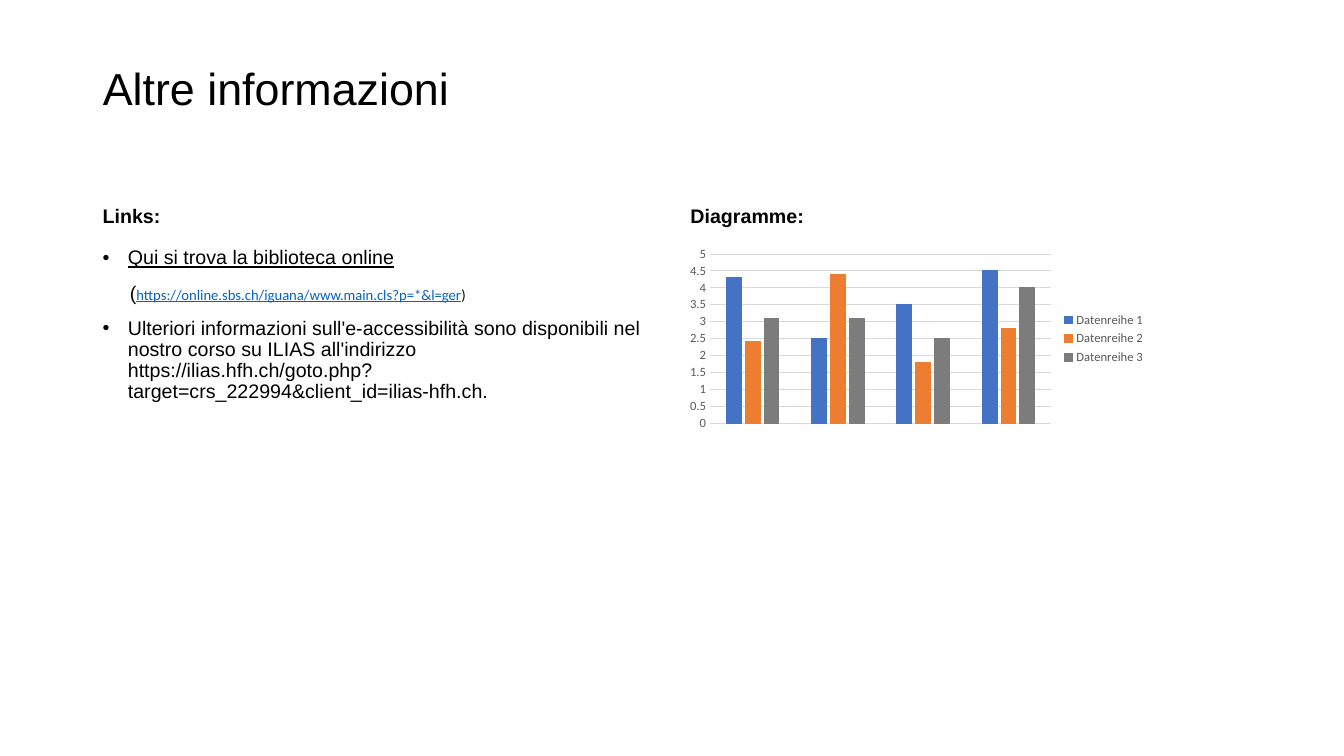
from lxml import etree
from pptx import Presentation
from pptx.chart.data import CategoryChartData
from pptx.dml.color import RGBColor
from pptx.enum.chart import XL_CHART_TYPE, XL_LEGEND_POSITION, XL_TICK_MARK
from pptx.enum.text import MSO_ANCHOR, MSO_AUTO_SIZE, PP_ALIGN
from pptx.oxml.ns import qn
from pptx.util import Inches, Pt

CLUSTERED = XL_CHART_TYPE.COLUMN_CLUSTERED
LEGEND_RIGHT = XL_LEGEND_POSITION.RIGHT
NO_TICK = XL_TICK_MARK.NONE
TOP, MIDDLE, BOTTOM = MSO_ANCHOR.TOP, MSO_ANCHOR.MIDDLE, MSO_ANCHOR.BOTTOM
LEFT = PP_ALIGN.LEFT
NO_FIT = MSO_AUTO_SIZE.NONE

BLACK, GREY, GRID, LINK = "000000", "595959", "D9D9D9", "0563C1"
BODY = {"name": "Arial", "size": 14, "color": BLACK}
TITLE = {**BODY, "size": 32}
HEADING = {**BODY, "bold": True}
SMALL = {**BODY, "name": "Calibri", "size": 10.5}
CHART = {"name": "Calibri", "size": 10, "color": BLACK}
LABEL = {**CHART, "size": 9, "color": GREY}

HEADING_HEIGHT = 0.47
CONTENT_OFFSET = 0.57
BULLET_INDENT = 0.25
URL_INDENT = 0.27

# Each paragraph: (bulleted, left indent, [(text, format), ...])
LINKS = [
    (True, BULLET_INDENT,
     [("Qui si trova la biblioteca online", {**BODY, "underline": True})]),
    (False, URL_INDENT,
     [("(", BODY),
      ("https://online.sbs.ch/iguana/www.main.cls?p=*&l=ger",
       {**SMALL, "color": LINK, "underline": True}),
      (")", SMALL)]),
    (True, BULLET_INDENT,
     [("Ulteriori informazioni sull'e-accessibilità sono disponibili nel "
       "nostro corso su ILIAS all'indirizzo https://ilias.hfh.ch/goto.php?"
       "target=crs_222994&client_id=ilias-hfh.ch.", BODY)]),
]
SERIES = [
    ("Datenreihe 1", (4.3, 2.5, 3.5, 4.5), "4472C4"),
    ("Datenreihe 2", (2.4, 4.4, 1.8, 2.8), "ED7D31"),
    ("Datenreihe 3", (3.1, 3.1, 2.5, 4), "7C7C7C"),
]


def rgb(value):
    return RGBColor.from_string(value)


def format_font(font, style):
    for key, value in style.items():
        if key == "color":
            font.color.rgb = rgb(value)
        else:
            setattr(font, key, Pt(value) if key == "size" else value)


def set_indent(p, indent, bulleted):
    pPr = p._p.get_or_add_pPr()
    pPr.set("marL", str(Inches(indent)))
    pPr.set("indent", str(-Inches(indent) if bulleted else 0))
    if bulleted:
        etree.SubElement(pPr, qn("a:buFont")).set("typeface", "Arial")
        etree.SubElement(pPr, qn("a:buChar")).set("char", "•")


def fill_text(tf, paragraphs, anchor):
    settings = {"word_wrap": True, "auto_size": NO_FIT, "vertical_anchor": anchor}
    for key, value in settings.items():
        setattr(tf, key, value)
    for i, (bulleted, indent, runs) in enumerate(paragraphs):
        p = tf.add_paragraph() if i else tf.paragraphs[0]
        set_indent(p, indent, bulleted)
        p.alignment = LEFT
        p.line_spacing = 0.9
        p.space_before = Pt(10 if i else 0)
        for text, style in runs:
            r = p.add_run()
            r.text = text
            format_font(r.font, style)


def add_title(s, x, y, w, h):
    title = s.shapes.title
    title.left, title.top, title.width, title.height = map(Inches, (x, y, w, h))
    fill_text(title.text_frame, [(False, 0, [("Altre informazioni", TITLE)])], MIDDLE)


def add_text(s, x, y, w, h, paragraphs, anchor):
    box = s.shapes.add_textbox(*map(Inches, (x, y, w, h)))
    fill_text(box.text_frame, paragraphs, anchor)


def add_heading(s, x, y, w, text):
    add_text(s, x, y, w, HEADING_HEIGHT, [(False, 0, [(text, HEADING)])], BOTTOM)


def add_links(s, x, y, w, h):
    add_heading(s, x, y, w, "Links:")
    add_text(s, x, y + CONTENT_OFFSET, w, h - CONTENT_OFFSET, LINKS, TOP)


def add_column_chart(s, x, y, w, h):
    data = CategoryChartData()
    data.categories = ["1", "2", "3", "4"]
    for name, values, _ in SERIES:
        data.add_series(name, values)
    chart = s.shapes.add_chart(CLUSTERED, *map(Inches, (x, y, w, h)), data).chart
    format_font(chart.font, CHART)
    chart.has_title = False
    chart.has_legend = True
    chart.legend.position = LEGEND_RIGHT
    chart.legend.include_in_layout = False
    format_font(chart.legend.font, LABEL)

    plot = chart.plots[0]
    plot.gap_width, plot.overlap, plot.vary_by_categories = 219, -27, False
    for series, (_, _, color) in zip(plot.series, SERIES):
        series.format.fill.solid()
        series.format.fill.fore_color.rgb = rgb(color)
        series.format.line.color.rgb = rgb(color)
        series.format.line.width = Pt(0.75)

    chart.category_axis.visible = False
    axis = chart.value_axis
    settings = {"minimum_scale": 0, "maximum_scale": 5, "major_unit": 0.5,
                "major_tick_mark": NO_TICK, "minor_tick_mark": NO_TICK,
                "has_major_gridlines": True}
    for key, value in settings.items():
        setattr(axis, key, value)
    axis.format.line.fill.background()
    axis.major_gridlines.format.line.color.rgb = rgb(GRID)
    axis.major_gridlines.format.line.width = Pt(0.75)
    format_font(axis.tick_labels.font, LABEL)


def add_diagram(s, x, y, w):
    add_heading(s, x, y, w, "Diagramme:")
    add_column_chart(s, x, y + CONTENT_OFFSET, 4.71, 1.9)


def main():
    prs = Presentation()
    prs.slide_width, prs.slide_height = Inches(13.33), Inches(7.5)
    s = prs.slides.add_slide(prs.slide_layouts[5])
    add_title(s, 0.92, 0.4, 11.5, 1.01)
    add_links(s, 0.92, 1.84, 5.64, 3.82)
    add_diagram(s, 6.75, 1.84, 5.67)
    prs.save("out.pptx")


if __name__ == "__main__":
    main()
